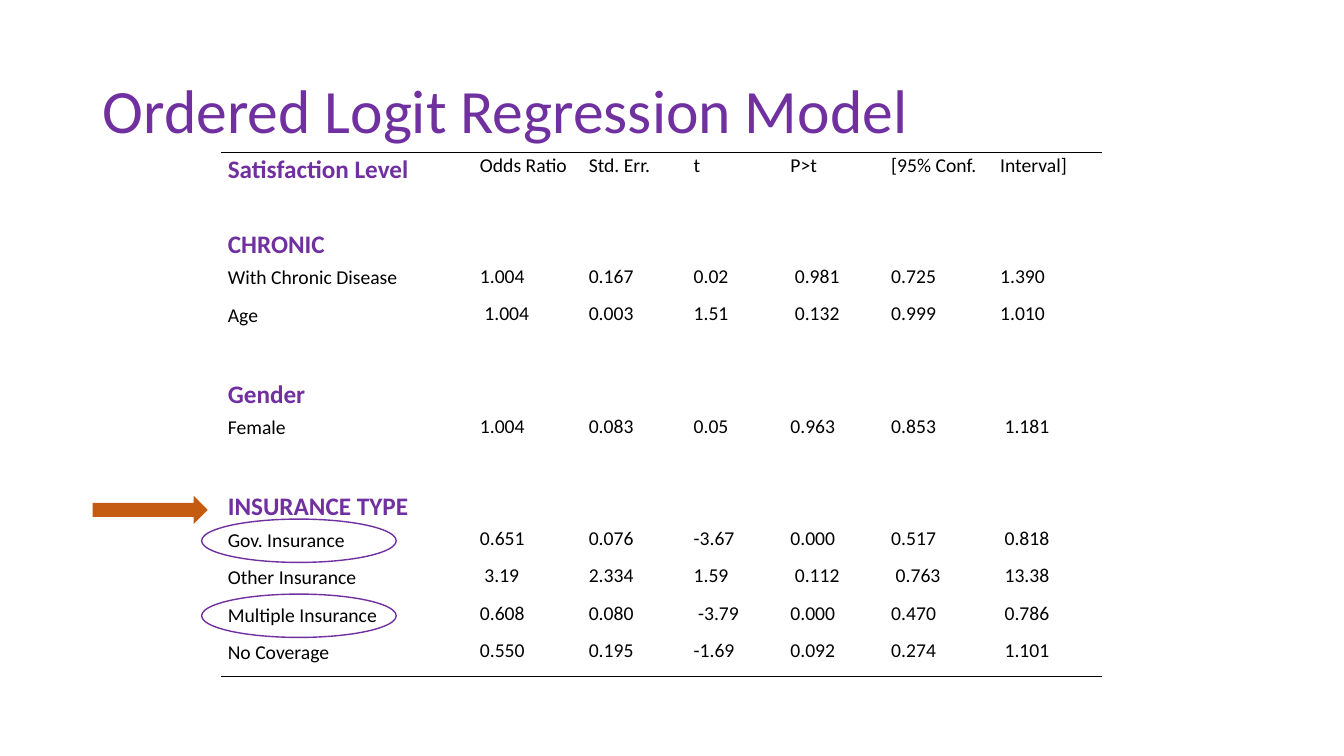
from lxml.etree import SubElement
from pptx import Presentation
from pptx.dml.color import RGBColor
from pptx.enum.shapes import MSO_SHAPE as SHAPE
from pptx.enum.text import MSO_ANCHOR as ANCHOR
from pptx.oxml.ns import qn
from pptx.util import Inches, Pt

COLORS = {"purple": "7030A0", "black": "000000", "orange": "C55A11"}
FONT = "Calibri"
NO_STYLE = "{2D5ABB26-0587-4C30-8999-92F81FD0307C}"

TABLE_LEFT, TABLE_TOP, ROW_H = 2.19, 1.51, 0.372
COL_WIDTHS = [2.5, 1.08, 1.04, 0.96, 1, 1.08, 1.08]
GROUP_ROW, GOV_ROW, MULTIPLE_ROW = 9, 10, 12

# A row with one entry is a group heading; an empty row is a gap.
ROWS = [
    ["Satisfaction Level", "Odds Ratio", "Std. Err.", "t", "P>t", "[95% Conf.", "Interval]"],
    [],
    ["CHRONIC"],
    ["With Chronic Disease", "1.004", "0.167", "0.02", " 0.981", "0.725", "1.390"],
    ["Age", " 1.004", "0.003", "1.51", " 0.132", "0.999", "1.010"],
    [],
    ["Gender"],
    ["Female", "1.004", "0.083", "0.05", "0.963", "0.853", " 1.181"],
    [],
    ["INSURANCE TYPE"],
    ["Gov. Insurance", "0.651", "0.076", "-3.67", "0.000", "0.517", " 0.818"],
    ["Other Insurance", " 3.19", "2.334", "1.59", " 0.112", " 0.763", " 13.38"],
    ["Multiple Insurance", "0.608", "0.080", " -3.79", "0.000", "0.470", " 0.786"],
    ["No Coverage", "0.550", "0.195", "-1.69", "0.092", "0.274", " 1.101"],
]


def rgb(name):
    return RGBColor.from_string(COLORS[name])


def row_top(row):
    return TABLE_TOP + row * ROW_H


def write(tf, text, size, color, bold=False, spacing=None):
    tf.text = text
    p = tf.paragraphs[0]
    p.line_spacing = spacing
    for r in p.runs:
        r.font.name, r.font.size, r.font.bold = FONT, Pt(size), bold
        r.font.color.rgb = rgb(color)


def add_title(s, text):
    sp = s.shapes.add_textbox(Inches(0.92), Inches(0.4), Inches(11.5), Inches(1.45))
    tf = sp.text_frame
    tf.word_wrap = True
    tf.vertical_anchor = ANCHOR.MIDDLE
    write(tf, text, 44, "purple", spacing=0.9)


def rule_cell(cell, tag):
    """Draw a thin black border on the side named by tag (a:lnT or a:lnB)."""
    tc_pr = cell._tc.get_or_add_tcPr()
    ln = SubElement(tc_pr, qn(tag), w=str(Pt(1)))
    fill = SubElement(ln, qn("a:solidFill"))
    SubElement(fill, qn("a:srgbClr"), val=COLORS["black"])
    tc_pr.insert(0, ln)


def add_results_table(s):
    frame = s.shapes.add_table(len(ROWS), len(COL_WIDTHS), Inches(TABLE_LEFT), Inches(TABLE_TOP),
                               Inches(sum(COL_WIDTHS)), Inches(ROW_H * len(ROWS)))
    table = frame.table
    table.first_row = table.horz_banding = False
    table._tbl.tblPr.find(qn("a:tableStyleId")).text = NO_STYLE
    for col, width in zip(table.columns, COL_WIDTHS):
        col.width = Inches(width)
    last = len(ROWS) - 1
    for i, values in enumerate(ROWS):
        table.rows[i].height = Inches(ROW_H)
        for j, cell in enumerate(table.rows[i].cells):
            cell.margin_left = cell.margin_right = Inches(0.07)
            cell.margin_top = cell.margin_bottom = 0
            cell.fill.background()
            if i == 0:
                rule_cell(cell, "a:lnT")
            elif i == last:
                rule_cell(cell, "a:lnB")
            if j < len(values):
                heading = j == 0 and (i == 0 or len(values) == 1)
                size, color = (18, "purple") if heading else (14, "black")
                spacing = 1.07 if i == 0 or j == 0 else None
                write(cell.text_frame, values[j], size, color, heading, spacing)
        if len(values) == 1:
            table.cell(i, 0).merge(table.cell(i, len(COL_WIDTHS) - 1))


def add_mark(s, kind, left, top, width, height, fill=None, line=None):
    sp = s.shapes.add_shape(kind, Inches(left), Inches(top), Inches(width), Inches(height))
    sp.shadow.inherit = False
    if fill:
        sp.fill.solid()
        sp.fill.fore_color.rgb = rgb(fill)
    else:
        sp.fill.background()
    if line:
        sp.line.color.rgb = rgb(line)
        sp.line.width = Pt(1)
    else:
        sp.line.fill.background()


def main():
    prs = Presentation()
    prs.slide_width, prs.slide_height = Inches(13.33), Inches(7.5)
    s = prs.slides.add_slide(prs.slide_layouts[6])
    add_title(s, "Ordered Logit Regression Model")
    add_results_table(s)
    add_mark(s, SHAPE.RIGHT_ARROW, 0.92, row_top(GROUP_ROW) + 0.06, 1.14, 0.28, fill="orange")
    for row in (MULTIPLE_ROW, GOV_ROW):
        add_mark(s, SHAPE.OVAL, 2, row_top(row) - 0.08, 1.93, 0.43, line="purple")
    prs.save("out.pptx")


if __name__ == "__main__":
    main()
